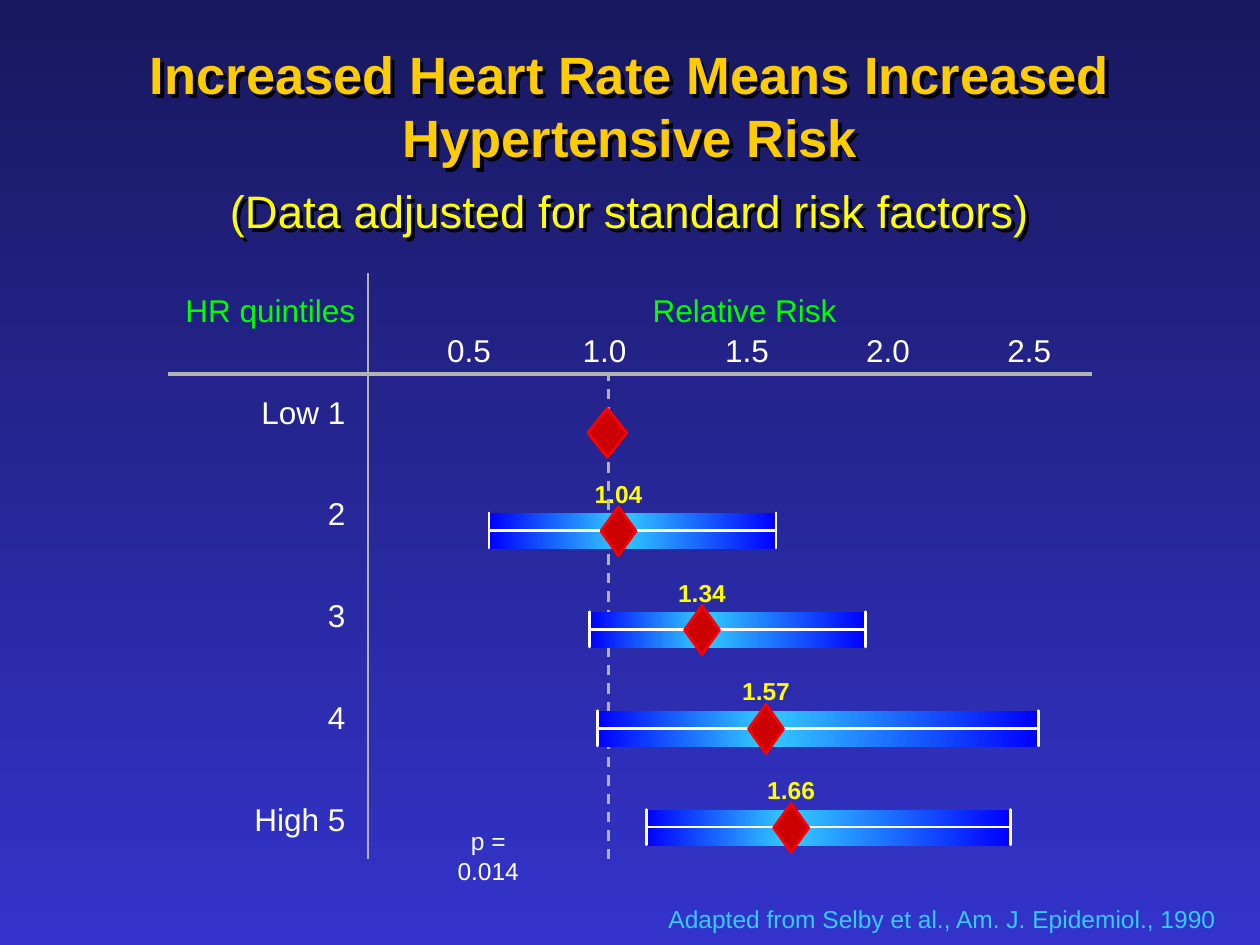
from lxml import etree
from pptx import Presentation
from pptx.dml.color import RGBColor
from pptx.enum.dml import MSO_LINE
from pptx.enum.shapes import MSO_CONNECTOR, MSO_SHAPE
from pptx.enum.text import MSO_ANCHOR, PP_ALIGN
from pptx.oxml.ns import qn
from pptx.util import Inches, Pt

NIGHT = RGBColor(0x18, 0x18, 0x5E)
INDIGO = RGBColor(0x33, 0x33, 0xCC)
GOLD = RGBColor(0xFF, 0xCC, 0x00)
YELLOW = RGBColor(0xFF, 0xFF, 0x00)
GREEN = RGBColor(0x00, 0xFF, 0x00)
WHITE = RGBColor(0xFF, 0xFF, 0xFF)
GREY = RGBColor(0xB2, 0xB2, 0xB2)
CYAN = RGBColor(0x33, 0xCC, 0xFF)
BLUE = RGBColor(0x00, 0x00, 0xFF)
RED = RGBColor(0xFF, 0x00, 0x00)
DARK_RED = RGBColor(0xCC, 0x00, 0x00)


def write(sp, lines, size, color, align=PP_ALIGN.CENTER, bold=False,
          anchor=MSO_ANCHOR.TOP, wrap=False, tabs=(), shadow=False, **spacing):
    tf = sp.text_frame
    tf.word_wrap = wrap
    tf.vertical_anchor = anchor
    for i, line in enumerate(lines):
        p = tf.paragraphs[0] if i == 0 else tf.add_paragraph()
        p.alignment = align
        for name, value in spacing.items():
            if i or name != "space_before":
                setattr(p, name, value)
        if tabs:
            tab_list = etree.SubElement(p._p.get_or_add_pPr(), qn("a:tabLst"))
            for pos in tabs:
                etree.SubElement(tab_list, qn("a:tab"), pos=str(Inches(pos)), algn="ctr")
        r = p.add_run()
        r.text = line
        for name, value in {"name": "Arial", "size": Pt(size), "bold": bold}.items():
            setattr(r.font, name, value)
        r.font.color.rgb = color
    if shadow:
        effects = etree.SubElement(sp._element.spPr, qn("a:effectLst"))
        outer = etree.SubElement(effects, qn("a:outerShdw"),
                                 dist=str(Inches(0.04)), dir="2700000", algn="ctr")
        etree.SubElement(outer, qn("a:srgbClr"), val="000000")


def add_diamond(shapes, x, top, width):
    sp = shapes.add_shape(MSO_SHAPE.DIAMOND, Inches(x - width / 2), Inches(top),
                          Inches(width), Inches(0.39))
    sp.shadow.inherit = False
    sp.fill.solid()
    sp.fill.fore_color.rgb = DARK_RED
    sp.line.color.rgb = RED
    sp.line.width = Pt(1.5)


prs = Presentation()
prs.slide_width, prs.slide_height = Inches(10), Inches(7.5)
s = prs.slides.add_slide(prs.slide_layouts[5])
fill = s.background.fill
fill.gradient()
fill.gradient_angle = 270
for stop, color in zip(fill.gradient_stops, (NIGHT, INDIGO)):
    stop.color.rgb = color

title = s.shapes.title
box = {"left": 0.75, "top": 0.25, "width": 8.5, "height": 1.17}
for name, value in box.items():
    setattr(title, name, Inches(value))
write(title, ["Increased Heart Rate Means Increased Hypertensive Risk"], 30, GOLD,
      bold=True, anchor=MSO_ANCHOR.MIDDLE, wrap=True, shadow=True)

axes = [
    (1.33, 2.97, 8.67, 2.97, 2.25, MSO_LINE.SOLID),
    (2.92, 6.82, 2.92, 2.17, 1.5, MSO_LINE.SOLID),
    (4.83, 6.82, 4.83, 2.96, 1.5, MSO_LINE.DASH),
]
for x1, y1, x2, y2, width, dash in axes:
    line = s.shapes.add_connector(MSO_CONNECTOR.STRAIGHT, Inches(x1), Inches(y1),
                                  Inches(x2), Inches(y2))
    line.line.color.rgb = GREY
    line.line.width = Pt(width)
    line.line.dash_style = dash
    etree.SubElement(line._element.spPr, qn("a:effectLst"))

texts = [
    ((0.75, 1.42, 8.5, 0.5), ["(Data adjusted for standard risk factors)"], 26, YELLOW,
     {"anchor": MSO_ANCHOR.MIDDLE, "wrap": True, "shadow": True}),
    ((4.75, 7.13, 5, 0.33), ["Adapted from Selby et al., Am. J. Epidemiol., 1990"], 14, CYAN,
     {"anchor": MSO_ANCHOR.MIDDLE, "align": PP_ALIGN.RIGHT, "wrap": True}),
    ((3.45, 2.58, 5.2, 0.4), ["0.5\t1.0\t1.5\t2.0\t2.5"], 18, WHITE,
     {"align": PP_ALIGN.LEFT, "wrap": True, "tabs": (1.25, 2.38, 3.5, 4.62)}),
    ((3.37, 6.51, 1.01, 0.33), ["p = 0.014"], 14, WHITE, {"wrap": True}),
    ((5.08, 2.26, 1.66, 0.4), ["Relative Risk"], 18, GREEN, {}),
    ((1.37, 2.26, 1.55, 0.4), ["HR quintiles"], 18, GREEN, {}),
    ((1.92, 3.1, 0.92, 3.62), ["Low 1", "2", "3", "4", "High 5"], 18, WHITE,
     {"align": PP_ALIGN.RIGHT, "line_spacing": 0.9, "space_before": Pt(38.8)}),
]
for place, lines, size, color, options in texts:
    tb = s.shapes.add_textbox(*map(Inches, place))
    write(tb, lines, size, color, **options)

RISK_ONE_X, INCHES_PER_RISK = 4.82, 2.21
FIRST_BAR, BAR_PITCH = 4.07, 0.785
add_diamond(s.shapes, RISK_ONE_X, 3.24, 0.31)

intervals = [
    (1.04, 3.88, 4.93, 6.16),
    (1.34, 4.68, 5.58, 6.87),
    (1.57, 4.74, 6.08, 8.24),
    (1.66, 5.13, 6.25, 8.02),
]
for i, (risk, low, middle, high) in enumerate(intervals):
    top = FIRST_BAR + i * BAR_PITCH
    bar = s.shapes.add_group_shape()
    for left, right, colors in ((low, middle, (BLUE, CYAN)), (middle, high, (CYAN, BLUE))):
        sp = bar.shapes.add_shape(MSO_SHAPE.RECTANGLE, Inches(left), Inches(top),
                                  Inches(right - left), Inches(0.29))
        sp.shadow.inherit = False
        sp.line.fill.background()
        sp.fill.gradient()
        sp.fill.gradient_angle = 0
        for stop, color in zip(sp.fill.gradient_stops, colors):
            stop.color.rgb = color
    whisker = bar.shapes.add_shape(MSO_SHAPE.LEFT_RIGHT_ARROW, Inches(low), Inches(top),
                                   Inches(high - low), Inches(0.28))
    whisker.adjustments[0] = whisker.adjustments[1] = 0
    whisker.shadow.inherit = False
    whisker.fill.background()
    whisker.line.color.rgb = WHITE
    whisker.line.width = Pt(1.5)

    x = RISK_ONE_X + (risk - 1) * INCHES_PER_RISK
    add_diamond(s.shapes, x, top - 0.05, 0.28)
    tb = s.shapes.add_textbox(Inches(x - 0.29), Inches(top - 0.32), Inches(0.58), Inches(0.33))
    write(tb, [f"{risk:.2f}"], 14, YELLOW, bold=True)

prs.save("out.pptx")
